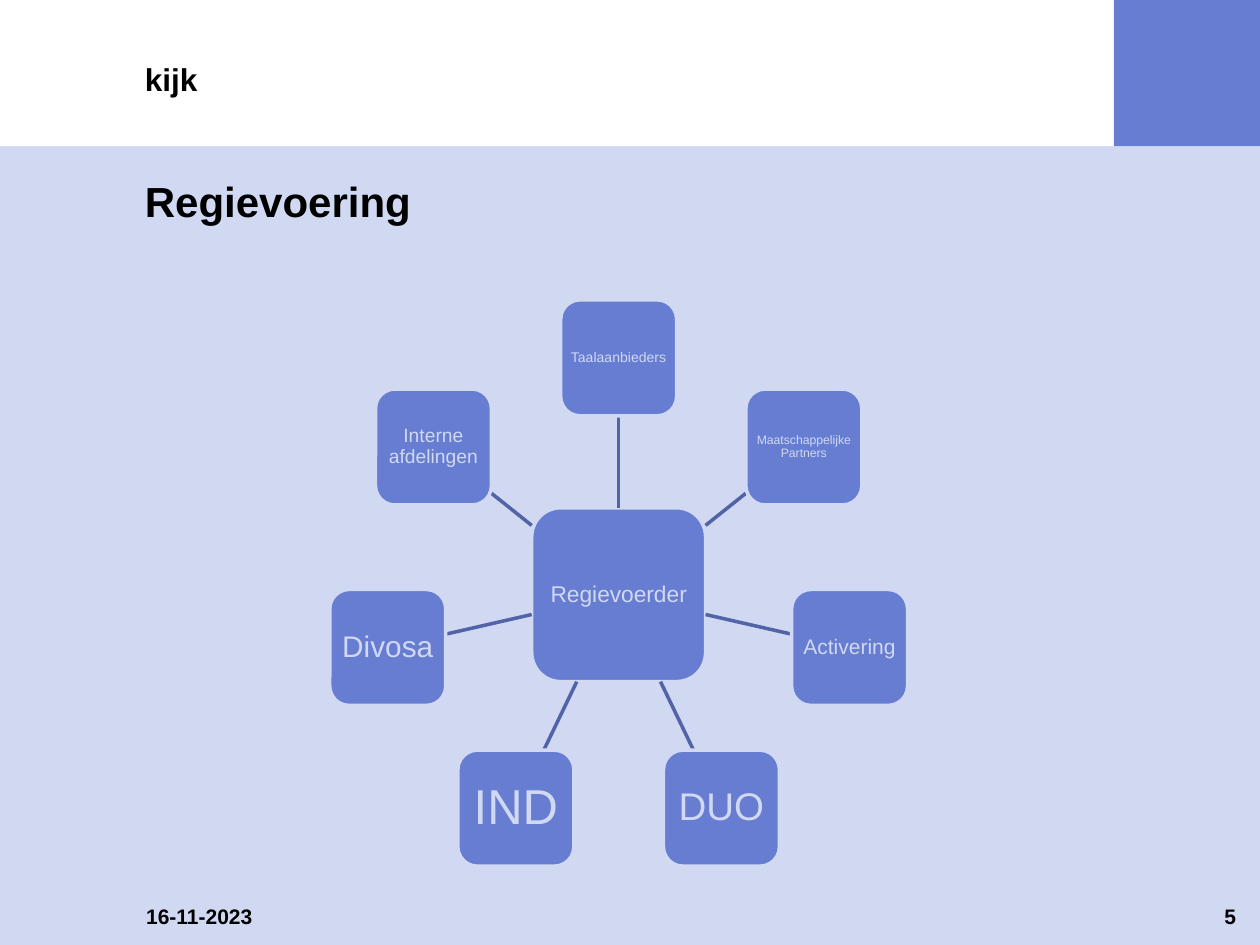
import math
from dataclasses import dataclass

from lxml import etree
from pptx import Presentation
from pptx.dml.color import RGBColor
from pptx.enum.shapes import MSO_CONNECTOR, MSO_SHAPE
from pptx.enum.text import MSO_ANCHOR, PP_ALIGN
from pptx.oxml.ns import qn
from pptx.util import Inches, Pt

RECTANGLE = MSO_SHAPE.RECTANGLE
ROUNDED = MSO_SHAPE.ROUNDED_RECTANGLE
STRAIGHT = MSO_CONNECTOR.STRAIGHT
TOP, MIDDLE, BOTTOM = MSO_ANCHOR.TOP, MSO_ANCHOR.MIDDLE, MSO_ANCHOR.BOTTOM
LEFT, CENTER, RIGHT = PP_ALIGN.LEFT, PP_ALIGN.CENTER, PP_ALIGN.RIGHT
TOP_SITE, BOTTOM_SITE = 0, 2


@dataclass(frozen=True)
class Theme:
    font: str = "Arial"
    background: RGBColor = RGBColor(0xD1, 0xD8, 0xF1)
    banner: RGBColor = RGBColor(0xFF, 0xFF, 0xFF)
    accent: RGBColor = RGBColor(0x66, 0x7D, 0xD1)
    spoke: RGBColor = RGBColor(0x52, 0x64, 0xA7)
    text: RGBColor = RGBColor(0x00, 0x00, 0x00)
    title_size: int = 24
    section_size: int = 18
    footer_size: int = 12
    stroke: int = 2
    inset_per_point: float = 0.0028


@dataclass(frozen=True)
class Label:
    text: str
    left: float
    top: float
    width: float
    height: float
    size: int
    align: PP_ALIGN = LEFT
    anchor: MSO_ANCHOR = TOP


@dataclass(frozen=True)
class Party:
    name: str
    size: int


THEME = Theme()
HUB_X, HUB_Y = 4.91, 4.72
HUB_SIDE, PARTY_SIDE, RADIUS = 1.38, 0.92, 1.88

LABELS = [
    Label("Regievoering", 1.15, 1.39, 7.51, 0.94, THEME.title_size),
    Label("16-11-2023", 1.16, 7.17, 2.08, 0.33, THEME.footer_size),
    Label("5", 9.41, 7.17, 0.4, 0.33, THEME.footer_size, RIGHT),
    Label("kijk", 1.15, 0.28, 7.51, 0.5, THEME.section_size, anchor=BOTTOM),
]
HUB = Party("Regievoerder", 13)
PARTIES = [
    Party("Taalaanbieders", 8),
    Party("Maatschappelijke Partners", 7),
    Party("Activering", 12),
    Party("DUO", 22),
    Party("IND", 28),
    Party("Divosa", 17),
    Party("Interne afdelingen", 11),
]


def write(shape, text: str, size: int, color: RGBColor, align: PP_ALIGN,
          anchor: MSO_ANCHOR, inset: float = 0, bold: bool = False):
    frame = shape.text_frame
    frame.word_wrap = True
    frame.vertical_anchor = anchor
    frame.margin_left = frame.margin_right = Inches(inset)
    frame.margin_top = frame.margin_bottom = Inches(inset)
    paragraph = frame.paragraphs[0]
    paragraph.text = text
    paragraph.alignment = align
    paragraph.font.name = THEME.font
    paragraph.font.size = Pt(size)
    paragraph.font.bold = bold
    paragraph.font.color.rgb = color
    return paragraph


def add_block(slide, left: float, width: float, height: float, color: RGBColor) -> None:
    block = slide.shapes.add_shape(RECTANGLE, Inches(left), 0, Inches(width), Inches(height))
    block.shadow.inherit = False
    block.fill.solid()
    block.fill.fore_color.rgb = color
    block.line.fill.background()


def add_label(slide, label: Label) -> None:
    box = slide.shapes.add_textbox(Inches(label.left), Inches(label.top),
                                   Inches(label.width), Inches(label.height))
    write(box, label.text, label.size, THEME.text, label.align, label.anchor, bold=True)


def add_party(slide, party: Party, x: float, y: float, side: float):
    tile = slide.shapes.add_shape(ROUNDED, Inches(x - side / 2), Inches(y - side / 2),
                                  Inches(side), Inches(side))
    tile.shadow.inherit = False
    tile.fill.solid()
    tile.fill.fore_color.rgb = THEME.accent
    tile.line.color.rgb = THEME.background
    tile.line.width = Pt(THEME.stroke)
    paragraph = write(tile, party.name, party.size, THEME.background, CENTER, MIDDLE,
                      inset=party.size * THEME.inset_per_point)
    paragraph.line_spacing = 0.9
    return tile


def add_spoke(slide, dx: float, dy: float):
    reach = max(abs(dx), abs(dy))
    start = HUB_SIDE / 2 / reach
    end = RADIUS - PARTY_SIDE / 2 / reach
    spoke = slide.shapes.add_connector(
        STRAIGHT,
        Inches(HUB_X + start * dx), Inches(HUB_Y + start * dy),
        Inches(HUB_X + end * dx), Inches(HUB_Y + end * dy))
    spoke.line.color.rgb = THEME.spoke
    spoke.line.width = Pt(THEME.stroke)
    etree.SubElement(spoke._element.spPr, qn("a:effectLst"))
    return spoke


def add_wheel(slide) -> None:
    hub = add_party(slide, HUB, HUB_X, HUB_Y, HUB_SIDE)
    for index, party in enumerate(PARTIES):
        angle = 2 * math.pi * index / len(PARTIES)
        dx, dy = math.sin(angle), -math.cos(angle)
        spoke = add_spoke(slide, dx, dy)
        tile = add_party(slide, party, HUB_X + RADIUS * dx, HUB_Y + RADIUS * dy, PARTY_SIDE)
        if index == 0:
            spoke.begin_connect(hub, TOP_SITE)
            spoke.end_connect(tile, BOTTOM_SITE)


def main() -> None:
    deck = Presentation()
    deck.slide_width, deck.slide_height = Inches(10), Inches(7.5)
    slide = deck.slides.add_slide(deck.slide_layouts[6])
    slide.background.fill.solid()
    slide.background.fill.fore_color.rgb = THEME.background
    add_block(slide, 0, 10, 1.16, THEME.banner)
    add_block(slide, 8.84, 1.16, 1.16, THEME.accent)
    add_wheel(slide)
    for label in LABELS:
        add_label(slide, label)
    deck.save("out.pptx")


if __name__ == "__main__":
    main()
